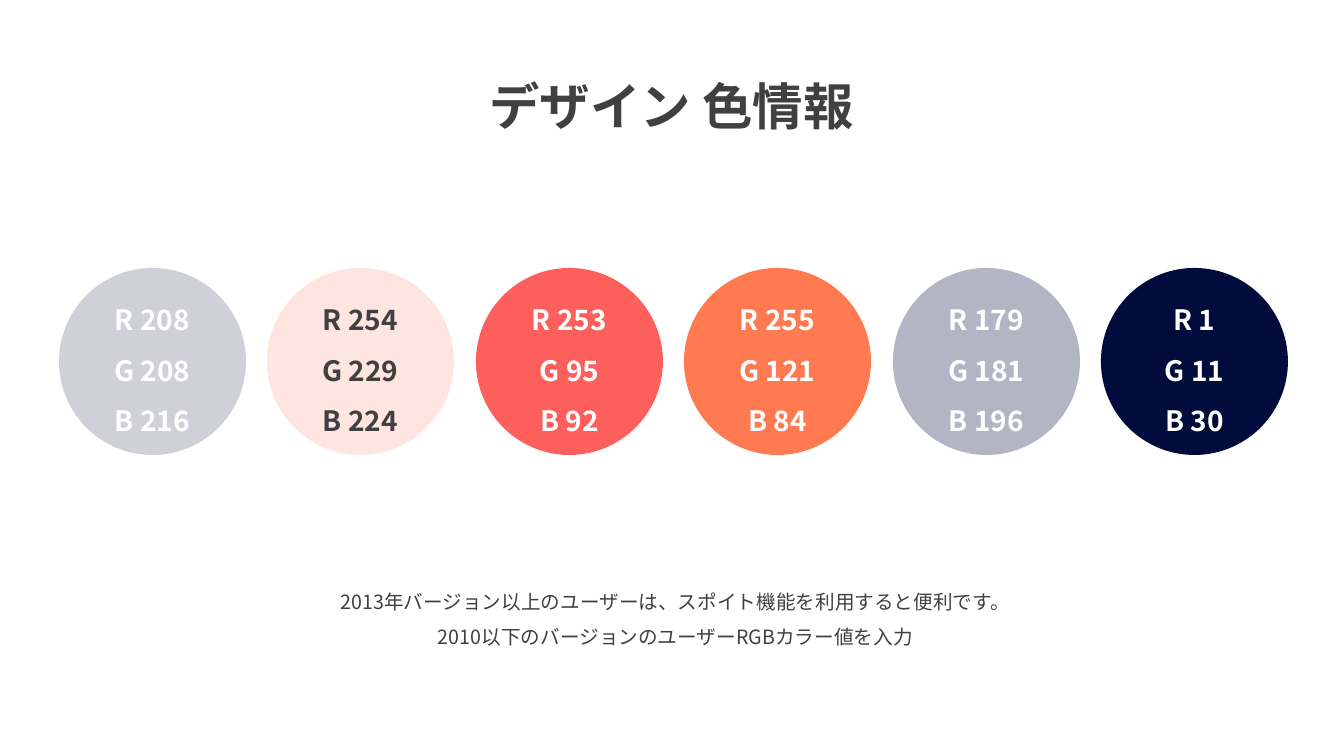
"""Build the colour information slide: six RGB swatches, a title and a usage note."""
from dataclasses import dataclass

from lxml.etree import SubElement
from pptx import Presentation
from pptx.dml.color import RGBColor
from pptx.enum.shapes import MSO_SHAPE as Shape
from pptx.enum.text import MSO_ANCHOR as Anchor, MSO_AUTO_SIZE as AutoSize, PP_ALIGN as Align
from pptx.oxml.ns import qn
from pptx.util import Pt

SLIDE_WIDTH, SLIDE_HEIGHT = 1344, 756
EMU_PER_PX = 12192000 / SLIDE_WIDTH


@dataclass(frozen=True)
class Theme:
    """Typeface, colours and type sizes of the slide."""
    typeface: str = "Noto Sans CJK KR"
    ink: str = "404040"
    light: str = "FFFFFF"
    title_size: int = 36
    swatch_size: int = 20
    note_size: int = 14
    line_spacing: float = 1.5


def px(length):
    """Turn px into EMU."""
    return round(length * EMU_PER_PX)


class SlideBuilder:
    """Draws styled elements on the current slide."""

    def __init__(self, slide, theme):
        """Keep the slide and its theme."""
        self.slide = slide
        self.theme = theme

    def add_lines(self, frame, lines, size, color, bold=False):
        """Fill a text frame with centred lines."""
        frame.word_wrap = True
        for index, line in enumerate(lines):
            paragraph = frame.add_paragraph() if index else frame.paragraphs[0]
            paragraph.alignment = Align.CENTER
            paragraph.line_spacing = self.theme.line_spacing
            run = paragraph.add_run()
            run.text = line
            font = run.font
            font.name, font.size, font.bold = self.theme.typeface, Pt(size), bold
            font.color.rgb = RGBColor.from_string(color)
            SubElement(run._r.get_or_add_rPr(), qn("a:ea"), typeface=self.theme.typeface)

    def title(self, text, left, top, width, height):
        """Place the title placeholder."""
        heading = self.slide.shapes.title
        heading.left, heading.top = px(left), px(top)
        heading.width, heading.height = px(width), px(height)
        frame = heading.text_frame
        frame.vertical_anchor = Anchor.TOP
        frame.auto_size = AutoSize.SHAPE_TO_FIT_TEXT
        self.add_lines(frame, [text], self.theme.title_size, self.theme.ink, bold=True)

    def swatch(self, fill, rgb, text_color, left, top, diameter):
        """Draw a colour circle labelled with its RGB values."""
        circle = self.slide.shapes.add_shape(
            Shape.OVAL, px(left), px(top), px(diameter), px(diameter))
        circle.shadow.inherit = False
        circle.fill.solid()
        circle.fill.fore_color.rgb = RGBColor.from_string(fill)
        circle.line.fill.background()
        circle.text_frame.vertical_anchor = Anchor.MIDDLE
        labels = [f"{channel} {value}" for channel, value in zip("RGB", rgb)]
        self.add_lines(circle.text_frame, labels, self.theme.swatch_size, text_color, bold=True)

    def note(self, lines, left, top, width, height):
        """Add the usage note."""
        usage = self.slide.shapes.add_textbox(px(left), px(top), px(width), px(height))
        usage.text_frame.auto_size = AutoSize.SHAPE_TO_FIT_TEXT
        self.add_lines(usage.text_frame, lines, self.theme.note_size, self.theme.ink)


def main():
    """Compose and save the slide."""
    deck = Presentation()
    deck.slide_width, deck.slide_height = px(SLIDE_WIDTH), px(SLIDE_HEIGHT)
    theme = Theme()
    builder = SlideBuilder(deck.slides.add_slide(deck.slide_layouts[5]), theme)

    builder.title("デザイン 色情報", 427, 40, 489, 92)

    palette = [
        ("D0D0D8", (208, 208, 216), theme.light),
        ("FEE5E0", (254, 229, 224), theme.ink),
        ("FD5F5C", (253, 95, 92), theme.light),
        ("FF7951", (255, 121, 84), theme.light),
        ("B3B5C4", (179, 181, 196), theme.light),
        ("010B3C", (1, 11, 30), theme.light),
    ]
    row_left, row_right, row_top, diameter = 59, 1288, 268, 187
    pitch = (row_right - row_left - diameter) / (len(palette) - 1)
    for index, (fill, rgb, text_color) in enumerate(palette):
        left = round(row_left + index * pitch)
        builder.swatch(fill, rgb, text_color, left, row_top, diameter)

    builder.note([
        "2013年バージョン以上のユーザーは、スポイト機能を利用すると便利です。",
        "2010以下のバージョンのユーザーRGBカラー値を入力",
    ], 254, 573, 843, 78)

    deck.save("out.pptx")


if __name__ == "__main__":
    main()
